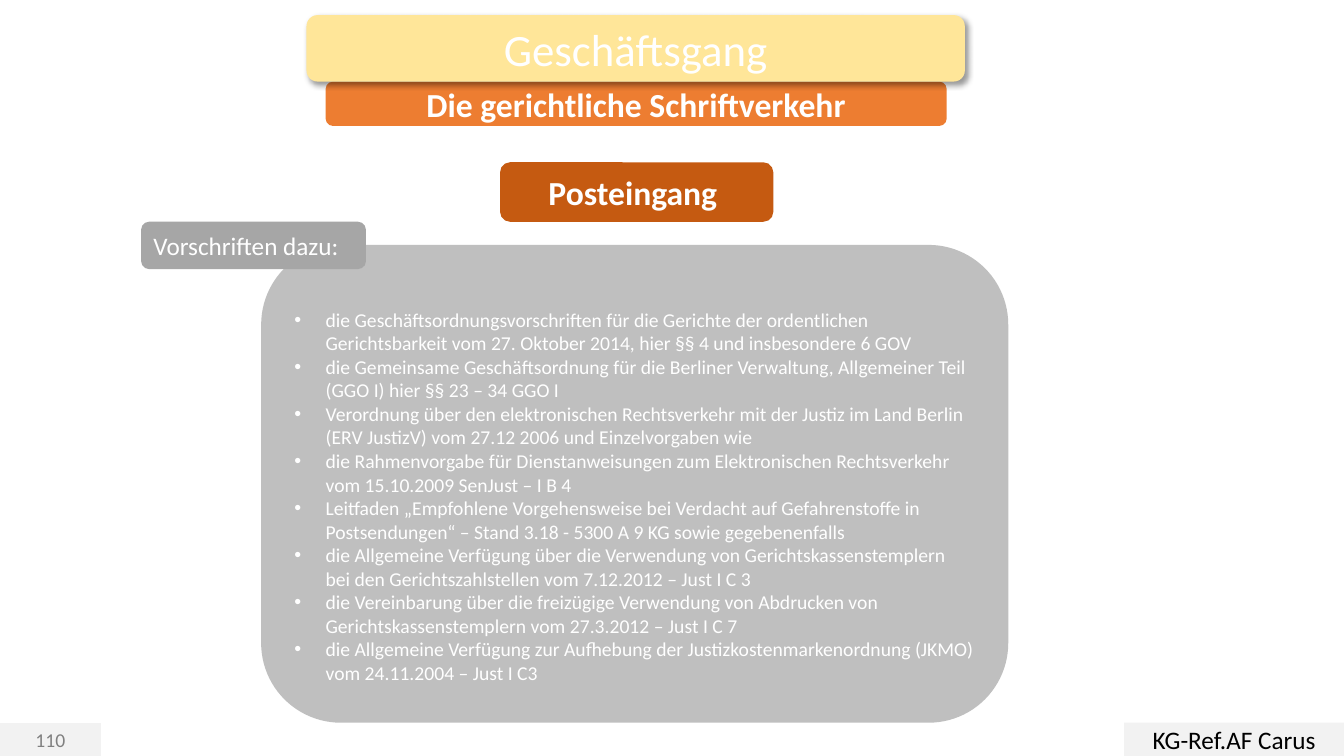
from dataclasses import dataclass
from typing import Optional

import lxml.etree
import pptx
import pptx.dml.color
import pptx.enum.shapes
import pptx.enum.text
import pptx.oxml
import pptx.oxml.ns
import pptx.util

Inches = pptx.util.Inches
Pt = pptx.util.Pt
ALIGN = pptx.enum.text.PP_ALIGN
SHAPE = pptx.enum.shapes.MSO_SHAPE

FONT = "Calibri"
COLORS = {
    "white": "FFFFFF",
    "black": "000000",
    "panel": "BFBFBF",
    "label": "A6A6A6",
    "footer": "F2F2F2",
    "number": "808080",
    "yellow": "FFE699",
    "orange": "ED7D31",
    "rust": "C55A11",
}
BULLET_INDENT = Inches(0.31)

REGULATIONS = [
    "die Geschäftsordnungsvorschriften für die Gerichte der ordentlichen Gerichtsbarkeit "
    "vom 27. Oktober 2014, hier §§ 4 und insbesondere 6 GOV",
    "die Gemeinsame Geschäftsordnung für die Berliner Verwaltung, Allgemeiner Teil "
    "(GGO I) hier §§ 23 – 34 GGO I",
    "Verordnung über den elektronischen Rechtsverkehr mit der Justiz im Land Berlin "
    "(ERV JustizV) vom 27.12 2006 und Einzelvorgaben wie",
    "die Rahmenvorgabe für Dienstanweisungen zum Elektronischen Rechtsverkehr "
    "vom 15.10.2009 SenJust – I B 4",
    "Leitfaden „Empfohlene Vorgehensweise bei Verdacht auf Gefahrenstoffe in "
    "Postsendungen“ – Stand 3.18 - 5300 A 9 KG sowie gegebenenfalls",
    "die Allgemeine Verfügung über die Verwendung von Gerichtskassenstemplern "
    "bei den Gerichtszahlstellen vom 7.12.2012 – Just I C 3",
    "die Vereinbarung über die freizügige Verwendung von Abdrucken von "
    "Gerichtskassenstemplern vom 27.3.2012 – Just I C 7",
    "die Allgemeine Verfügung zur Aufhebung der Justizkostenmarkenordnung "
    "(JKMO) vom 24.11.2004 – Just I C3",
]


@dataclass
class Box:
    left: float
    top: float
    width: float
    height: float
    fill: str
    text: str = ""
    size: int = 18
    color: str = "white"
    bold: bool = False
    align: ALIGN = ALIGN.CENTER
    kind: SHAPE = SHAPE.ROUNDED_RECTANGLE
    line: Optional[str] = None


PANEL = Box(2.59, 2.43, 7.41, 4.74, "panel")
TITLE_BANNER = Box(3.04, 0.15, 6.53, 0.66, "yellow")
BOXES = [
    Box(0, 7.18, 1, 0.32, "footer", "110", 14, "number",
        kind=SHAPE.RECTANGLE, line="footer"),
    Box(11.15, 7.17, 2.18, 0.33, "footer", "KG-Ref.AF Carus", 18, "black",
        kind=SHAPE.RECTANGLE),
    Box(3.23, 0.81, 6.16, 0.44, "orange", "Die gerichtliche Schriftverkehr", 24, bold=True),
    Box(1.4, 2.2, 2.23, 0.47, "label", "Vorschriften dazu:", align=ALIGN.LEFT),
    Box(4.96, 1.61, 2.71, 0.59, "rust", "Posteingang ", 24, bold=True),
]


def rgb(name: str) -> pptx.dml.color.RGBColor:
    return pptx.dml.color.RGBColor.from_string(COLORS[name])


def add_run(paragraph, text: str, size: int, color: str, bold: bool = False) -> None:
    run = paragraph.add_run()
    run.text = text
    run.font.name = FONT
    run.font.size = Pt(size)
    run.font.bold = bold
    run.font.color.rgb = rgb(color)


def place(shape, box: Box) -> None:
    shape.left, shape.top = Inches(box.left), Inches(box.top)
    shape.width, shape.height = Inches(box.width), Inches(box.height)


def add_box(slide, box: Box):
    shape = slide.shapes.add_shape(box.kind, 0, 0, 0, 0)
    place(shape, box)
    shape.shadow.inherit = False
    shape.fill.solid()
    shape.fill.fore_color.rgb = rgb(box.fill)
    if box.line:
        shape.line.color.rgb = rgb(box.line)
        shape.line.width = Pt(1)
    else:
        shape.line.fill.background()
    frame = shape.text_frame
    frame.word_wrap = True
    frame.vertical_anchor = pptx.enum.text.MSO_ANCHOR.MIDDLE
    if box.text:
        paragraph = frame.paragraphs[0]
        paragraph.alignment = box.align
        add_run(paragraph, box.text, box.size, box.color, box.bold)
    return shape


def add_bullet(paragraph, text: str) -> None:
    paragraph.alignment = ALIGN.LEFT
    properties = paragraph._p.get_or_add_pPr()
    properties.set("marL", str(BULLET_INDENT))
    properties.set("indent", str(-BULLET_INDENT))
    qn = pptx.oxml.ns.qn
    lxml.etree.SubElement(properties, qn("a:buFont")).set("typeface", "Arial")
    lxml.etree.SubElement(properties, qn("a:buChar")).set("char", "•")
    add_run(paragraph, text, 14, "white")


def add_shadow(shape) -> None:
    effects = shape._element.spPr.find(pptx.oxml.ns.qn("a:effectLst"))
    effects.append(pptx.oxml.parse_xml(
        f'<a:outerShdw {pptx.oxml.ns.nsdecls("a")} blurRad="{Pt(4)}" dist="{Pt(3)}" '
        f'dir="{45 * 60000}" algn="tl" rotWithShape="0">'
        f'<a:srgbClr val="{COLORS["black"]}"><a:alpha val="40000"/></a:srgbClr>'
        '</a:outerShdw>'))


def add_title(slide) -> None:
    add_shadow(add_box(slide, TITLE_BANNER))
    title = slide.shapes.title
    place(title, TITLE_BANNER)
    frame = title.text_frame
    frame.word_wrap = True
    frame.auto_size = pptx.enum.text.MSO_AUTO_SIZE.NONE
    frame.vertical_anchor = pptx.enum.text.MSO_ANCHOR.MIDDLE
    paragraph = frame.paragraphs[0]
    paragraph.alignment = ALIGN.CENTER
    add_run(paragraph, "Geschäftsgang", 32, "white")
    # Bring the title in front of its banner
    slide.shapes._spTree.append(title._element)


def main() -> None:
    presentation = pptx.Presentation()
    presentation.slide_width = Inches(13.33)
    presentation.slide_height = Inches(7.5)
    slide = presentation.slides.add_slide(presentation.slide_layouts[5])

    # Panel with the list of regulations
    frame = add_box(slide, PANEL).text_frame
    frame.margin_top = Inches(0.29)
    for index, regulation in enumerate(REGULATIONS):
        add_bullet(frame.add_paragraph() if index else frame.paragraphs[0], regulation)

    # Footer, subtitle and labels
    for box in BOXES:
        add_box(slide, box)

    # Title on its banner
    add_title(slide)
    presentation.save("out.pptx")


if __name__ == "__main__":
    main()
